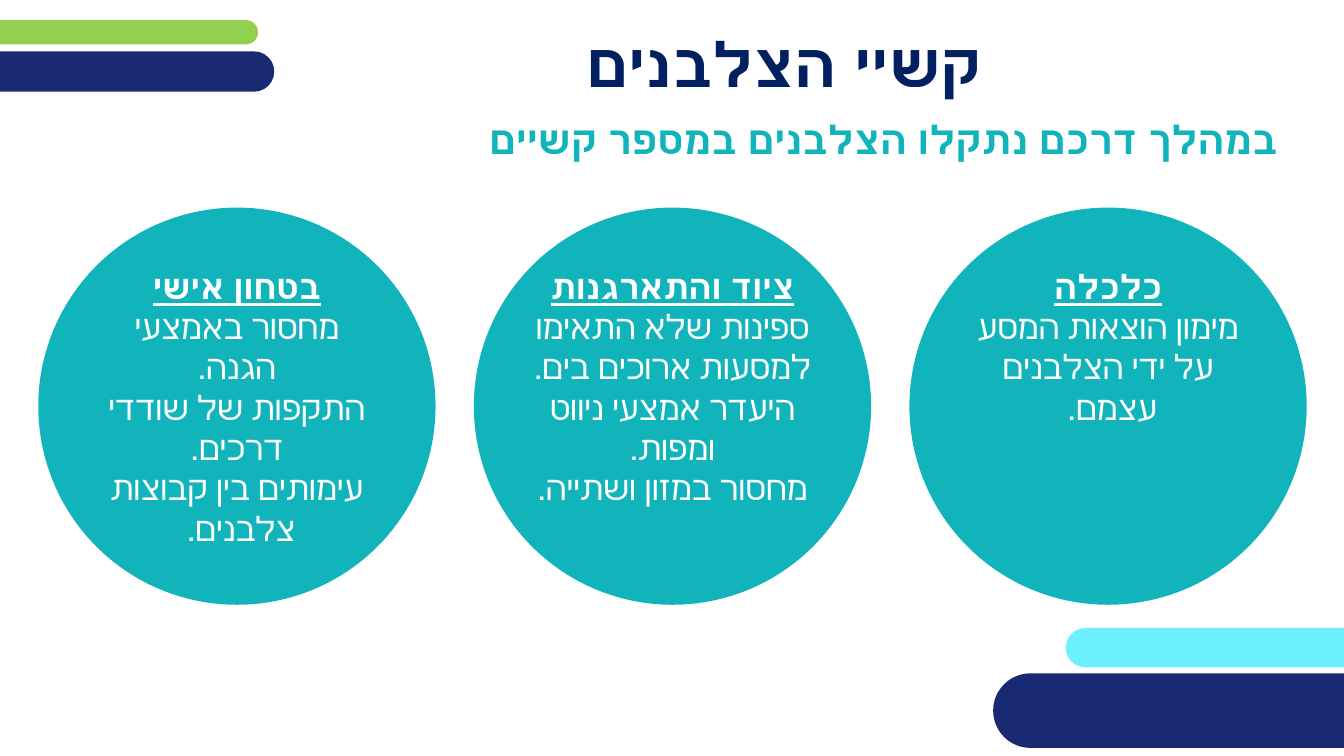
from pptx import Presentation
from pptx.dml.color import RGBColor
from pptx.enum.shapes import MSO_SHAPE
from pptx.enum.text import MSO_ANCHOR, PP_ALIGN
from pptx.util import Inches, Pt
from lxml.etree import SubElement
from pptx.oxml.ns import qn

NAVY, TEAL, WHITE = "192A72", "12B4BC", "FFFFFF"
FONT = "Arial"
TITLE = "קשיי הצלבנים"
LEAD = "במהלך דרכם נתקלו הצלבנים במספר קשיים"

# Right to left: heading, then its points
TOPICS = [
    ("כלכלה", ["מימון הוצאות המסע על ידי הצלבנים עצמם. "]),
    ("ציוד והתארגנות", ["ספינות שלא התאימו למסעות ארוכים בים. ",
                        "היעדר אמצעי ניווט ומפות.",
                        "מחסור במזון ושתייה."]),
    ("בטחון אישי", ["מחסור באמצעי הגנה.",
                    "התקפות של שודדי דרכים.",
                    "עימותים בין קבוצות צלבנים. "]),
]

# Left, top, width, height, colour
BARS = [
    (10.57, 6.23, 5.21, 0.39, "6CF0FF"),
    (-0.28, 0.2, 2.84, 0.24, "92D050"),
    (-0.53, 0.51, 3.25, 0.4, NAVY),
    (9.85, 6.68, 4.11, 0.74, NAVY),
]
SIZE, STEP, LEFT, TOP = 3.94, 4.32, 9.02, 2.06


def color(code):
    return RGBColor.from_string(code)


def add_solid(kind, box, code):
    shape = slide.shapes.add_shape(kind, *map(Inches, box))
    shape.shadow.inherit = False
    shape.fill.solid()
    shape.fill.fore_color.rgb = color(code)
    shape.line.fill.background()
    return shape


def style(para, size, code, bold, align=PP_ALIGN.CENTER):
    """Format a right-to-left paragraph."""
    para.alignment = align
    para._p.get_or_add_pPr().set("rtl", "1")
    font = para.font
    font.name, font.size, font.bold = FONT, Pt(size), bold
    font.color.rgb = color(code)


def fill_holder(shape, box, text):
    shape.left, shape.top, shape.width, shape.height = map(Inches, box)
    frame = shape.text_frame
    frame.text = text
    frame.vertical_anchor = MSO_ANCHOR.MIDDLE
    return frame.paragraphs[0]


deck = Presentation()
deck.slide_width, deck.slide_height = Inches(13.33), Inches(7.5)
slide = deck.slides.add_slide(deck.slide_layouts[1])

for *box, code in BARS:
    bar = add_solid(MSO_SHAPE.ROUNDED_RECTANGLE, box, code)
    bar.adjustments[0] = 0.5

title = fill_holder(slide.shapes.title, (2.79, 0.23, 9.98, 0.79), TITLE)
style(title, 44, "002060", True)

lead = fill_holder(slide.placeholders[1], (2.79, 1.08, 9.98, 0.59), LEAD)
lead.space_before = Pt(5.6)
props = lead._p.get_or_add_pPr()
props.set("marL", "0")
props.set("indent", "0")
SubElement(props, qn("a:buNone"))
style(lead, 28, TEAL, True, PP_ALIGN.RIGHT)

for i, (head, points) in enumerate(TOPICS):
    disc = add_solid(MSO_SHAPE.OVAL, (LEFT - i * STEP, TOP, SIZE, SIZE), TEAL)
    frame = disc.text_frame
    frame.word_wrap = True
    frame.vertical_anchor = MSO_ANCHOR.TOP
    frame.margin_left = frame.margin_right = 0
    frame.margin_top = frame.margin_bottom = 0
    frame.text = "\n".join([head, *points])
    for n, para in enumerate(frame.paragraphs):
        style(para, 24, WHITE, n == 0)
        para.font.underline = n == 0

deck.save("out.pptx")
